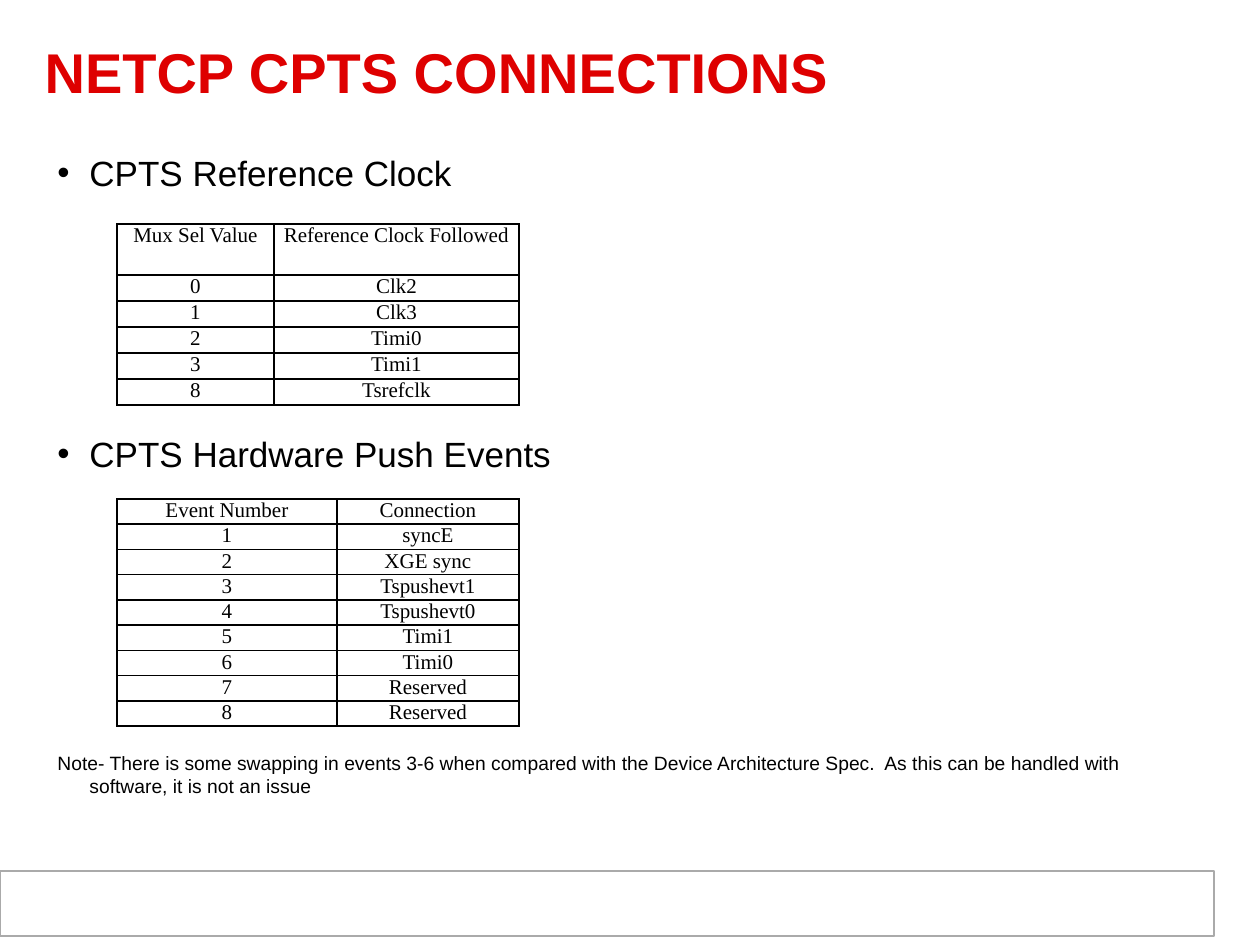
from dataclasses import dataclass

from lxml.etree import SubElement
from pptx import Presentation
from pptx.dml.color import RGBColor
from pptx.enum.shapes import MSO_SHAPE as Shape
from pptx.enum.text import MSO_ANCHOR as Anchor, PP_ALIGN as Align
from pptx.oxml.ns import qn
from pptx.util import Emu, Pt

PX = 914400 / 126  # EMU in one px


@dataclass(frozen=True)
class Theme:
    sans: str = "Arial"
    serif: str = "Times New Roman"
    red: str = "DE0000"
    black: str = "000000"
    white: str = "FFFFFF"
    gray: str = "AAAAAA"
    title: int = 32
    body: int = 20
    cell: int = 12
    note: int = 11


T = Theme()

# Text, size, bullet, space before in points (leaves room for the tables)
BODY = [
    ("CPTS Reference Clock", T.body, True, 0),
    ("CPTS Hardware Push Events", T.body, True, 137),
    ("Note- There is some swapping in events 3-6 when compared with the "
     "Device Architecture Spec.  As this can be handled with software, "
     "it is not an issue", T.note, False, 158),
]
CLOCKS = [
    ("Mux Sel Value", "Reference Clock Followed"),
    ("0", "Clk2"), ("1", "Clk3"), ("2", "Timi0"), ("3", "Timi1"),
    ("8", "Tsrefclk"),
]
CONNECTIONS = ["syncE", "XGE sync", "Tspushevt1", "Tspushevt0",
               "Timi1", "Timi0", "Reserved", "Reserved"]
EVENTS = [("Event Number", "Connection")]
EVENTS += [(str(n), name) for n, name in enumerate(CONNECTIONS, 1)]


def px(n):
    return Emu(round(n * PX))


def rgb(color):
    return RGBColor.from_string(color)


def style(p, font, size, color, bold=False):
    for r in p.runs:
        f = r.font
        f.name, f.size, f.bold = font, Pt(size), bold
        f.color.rgb = rgb(color)


def add_footer(s, x, y, w, h):
    sp = s.shapes.add_shape(Shape.RECTANGLE, px(x), px(y), px(w), px(h))
    sp.shadow.inherit = False
    sp.fill.solid()
    sp.fill.fore_color.rgb = rgb(T.white)
    sp.line.color.rgb = rgb(T.gray)
    sp.line.width = Pt(0.75)


def set_title(s, text, x, y, w, h):
    sp = s.shapes.title
    sp.left, sp.top, sp.width, sp.height = px(x), px(y), px(w), px(h)
    tf = sp.text_frame
    tf.text = text
    tf.vertical_anchor = Anchor.MIDDLE
    p = tf.paragraphs[0]
    p.alignment, p.line_spacing = Align.LEFT, 0.85
    style(p, T.sans, T.title, T.red, bold=True)


def add_body(s, x, y, w, h):
    tf = s.shapes.add_textbox(px(x), px(y), px(w), px(h)).text_frame
    tf.word_wrap = True
    for i, (text, size, bullet, before) in enumerate(BODY):
        p = tf.add_paragraph() if i else tf.paragraphs[0]
        p.text = text
        p.space_before = Pt(before)
        # Hanging indent, with or without a bullet
        pPr = p._p.get_or_add_pPr()
        pPr.set("marL", str(px(32)))
        pPr.set("indent", str(-px(32)))
        if bullet:
            SubElement(pPr, qn("a:buFont"), typeface=T.sans)
            SubElement(pPr, qn("a:buChar"), char="•")
        else:
            SubElement(pPr, qn("a:buNone"))
        style(p, T.sans, size, T.black)


def add_borders(cell):
    tcPr = cell._tc.get_or_add_tcPr()
    for i, side in enumerate(("lnL", "lnR", "lnT", "lnB")):
        ln = SubElement(tcPr, qn(f"a:{side}"), w=str(Pt(1)))
        tcPr.insert(i, ln)  # borders come before the fill
        fill = SubElement(ln, qn("a:solidFill"))
        SubElement(fill, qn("a:srgbClr"), val=T.black)


def add_grid(s, data, x, y, col_widths, row_heights):
    frame = s.shapes.add_table(len(data), len(col_widths), px(x), px(y),
                               px(sum(col_widths)), px(sum(row_heights)))
    table = frame.table
    table.first_row = table.horz_banding = False
    for col, w in zip(table.columns, col_widths):
        col.width = px(w)
    for row, h, values in zip(table.rows, row_heights, data):
        row.height = px(h)
        for cell, value in zip(row.cells, values):
            cell.text = value
            cell.fill.background()
            cell.margin_left = cell.margin_right = px(9)
            cell.margin_top = cell.margin_bottom = 0
            p = cell.text_frame.paragraphs[0]
            p.alignment = Align.CENTER
            style(p, T.serif, T.cell, T.black)
            add_borders(cell)


def main():
    prs = Presentation()
    prs.slide_width, prs.slide_height = px(1260), px(945)
    s = prs.slides.add_slide(prs.slide_layouts[5])
    add_footer(s, 0, 871, 1214, 65)
    set_title(s, "NETCP CPTS CONNECTIONS", 32, 20, 1166, 112)
    add_body(s, 45, 145, 1167, 682)
    add_grid(s, CLOCKS, 117, 224, (157, 245), [51] + [26] * 5)
    add_grid(s, EVENTS, 117, 499, (220, 182), [24] * len(EVENTS))
    prs.save("out.pptx")


if __name__ == "__main__":
    main()
